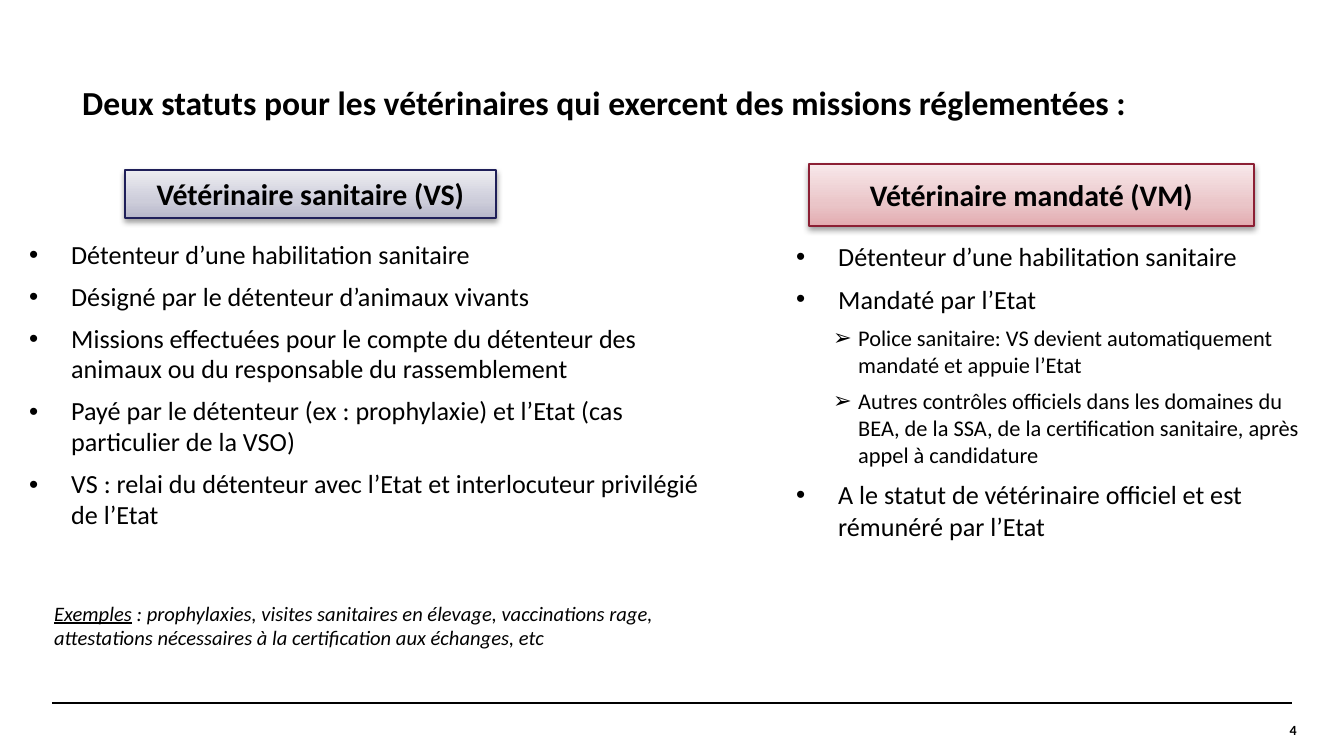
from lxml.etree import SubElement
from pptx import Presentation
from pptx.dml.color import RGBColor
from pptx.enum.shapes import MSO_CONNECTOR, MSO_SHAPE
from pptx.enum.text import MSO_ANCHOR, PP_ALIGN
from pptx.oxml import parse_xml
from pptx.oxml.ns import nsdecls, qn
from pptx.util import Emu, Pt

SCALE = 914400 / 134.4
FONT = "Calibri"
BLACK = "000000"

TITLE = "Deux statuts pour les vétérinaires qui exercent des missions réglementées :"
EXAMPLES = [
    "Exemples",
    " : prophylaxies, visites sanitaires en élevage, vaccinations rage, "
    "attestations nécessaires à la certification aux échanges, etc",
]
PAGE_NUMBER = "4"
RULE = (52, 703, 1292, 703)

# (bullet, left margin px, hanging px, size pt) per level
LEVELS = [("•", 42, 42, 14), ("➢", 62, 25, 12)]

STATUSES = [
    {
        "heading": "Vétérinaire sanitaire (VS)",
        "heading_box": (125, 170, 371, 48),
        "outline": "1F1F59",
        "gradient": [(0, "B7B7CA"), (35, "CDCDDA"), (100, "ECECF1")],
        "points_box": (16, 233, 719, 362),
        "line_spacing": 0.98,
        "points": [
            (0, "Détenteur d’une habilitation sanitaire", 3),
            (0, "Désigné par le détenteur d’animaux vivants", 3),
            (0, "Missions effectuées pour le compte du détenteur des animaux "
                "ou du responsable du rassemblement", 3),
            (0, "Payé par le détenteur (ex : prophylaxie) et l’Etat "
                "(cas particulier de la VSO)", 3),
            (0, "VS : relai du détenteur avec l’Etat et interlocuteur "
                "privilégié de l’Etat", 3),
        ],
    },
    {
        "heading": "Vétérinaire mandaté (VM)",
        "heading_box": (809, 164, 445, 62),
        "outline": "8C1F34",
        "gradient": [(0, "E3ABB0"), (35, "EAC5C8"), (100, "F8E8EA")],
        "points_box": (783, 234, 530, 465),
        "line_spacing": 1.0,
        "points": [
            (0, "Détenteur d’une habilitation sanitaire", 3),
            (0, "Mandaté par l’Etat", 2),
            (1, "Police sanitaire: VS devient automatiquement mandaté "
                "et appuie l’Etat", 2),
            (1, "Autres contrôles officiels dans les domaines du BEA, de la SSA, "
                "de la certification sanitaire, après appel à candidature", 3),
            (0, "A le statut de vétérinaire officiel et est rémunéré par l’Etat", 5),
        ],
    },
]


def px(*lengths):
    """Turn px lengths into EMU."""
    return [Emu(round(length * SCALE)) for length in lengths]


def color(code):
    """Turn a hex string into a colour."""
    return RGBColor.from_string(code)


def style(font, size, bold=False, italic=False):
    """Apply the shared typeface and the given size and weight."""
    font.name, font.size, font.bold, font.italic = FONT, Pt(size), bold, italic
    font.color.rgb = color(BLACK)


def add_text(slide, box, text=""):
    """Add a wrapping text box and return its frame."""
    frame = slide.shapes.add_textbox(*px(*box)).text_frame
    frame.word_wrap = True
    frame.text = text
    return frame


def add_heading(slide, status):
    """Add a gradient heading with a soft shadow."""
    heading = slide.shapes.add_shape(MSO_SHAPE.RECTANGLE, *px(*status["heading_box"]))
    heading.line.color.rgb = color(status["outline"])
    heading.line.width = Pt(0.75)
    stops = "".join(
        f'<a:gs pos="{position * 1000}"><a:srgbClr val="{code}"/></a:gs>'
        for position, code in status["gradient"]
    )
    properties = heading.element.spPr
    properties.find(qn("a:ln")).addprevious(parse_xml(
        f'<a:gradFill {nsdecls("a")} rotWithShape="1"><a:gsLst>{stops}</a:gsLst>'
        '<a:lin ang="16200000" scaled="0"/></a:gradFill>'))
    properties.append(parse_xml(
        f'<a:effectLst {nsdecls("a")}><a:outerShdw blurRad="40000" dist="20000" '
        f'dir="5400000" rotWithShape="0"><a:srgbClr val="{BLACK}">'
        '<a:alpha val="38000"/></a:srgbClr></a:outerShdw></a:effectLst>'))
    frame = heading.text_frame
    frame.margin_left = frame.margin_right = frame.margin_top = frame.margin_bottom = 0
    frame.vertical_anchor = MSO_ANCHOR.MIDDLE
    frame.text = status["heading"]
    paragraph = frame.paragraphs[0]
    paragraph.alignment = PP_ALIGN.CENTER
    paragraph.space_after = Pt(5)
    style(paragraph.runs[0].font, 16, bold=True)


def add_points(slide, status):
    """Add the bulleted points of one status."""
    frame = add_text(slide, status["points_box"])
    for index, (level, point, after) in enumerate(status["points"]):
        paragraph = frame.add_paragraph() if index else frame.paragraphs[0]
        bullet, margin, hanging, size = LEVELS[level]
        paragraph.text = point
        paragraph.level = level
        paragraph.line_spacing = status["line_spacing"]
        paragraph.space_before = Pt(3 if index else 0)
        paragraph.space_after = Pt(after)
        layout = paragraph._p.get_or_add_pPr()
        left, indent = px(margin, -hanging)
        layout.set("marL", str(left))
        layout.set("indent", str(indent))
        SubElement(layout, qn("a:buFont"), typeface="Arial")
        SubElement(layout, qn("a:buChar"), char=bullet)
        style(paragraph.runs[0].font, size)


def main():
    """Build the slide on the two veterinary statuses."""
    deck = Presentation()
    deck.slide_width, deck.slide_height = px(1344, 756)
    slide = deck.slides.add_slide(deck.slide_layouts[6])

    rule = slide.shapes.add_connector(MSO_CONNECTOR.STRAIGHT, *px(*RULE))
    rule.line.color.rgb = color(BLACK)
    rule.line.width = Pt(0.8)
    SubElement(rule._element.spPr, qn("a:effectLst"))

    number = add_text(slide, (1111, 715, 199, 52), PAGE_NUMBER).paragraphs[0]
    number.alignment = PP_ALIGN.RIGHT
    style(number.runs[0].font, 7.5, bold=True)

    for status in STATUSES:
        add_points(slide, status)
        add_heading(slide, status)

    examples = add_text(slide, (16, 594, 672, 89)).paragraphs[0]
    examples._p.get_or_add_pPr().set("marL", str(px(25)[0]))
    for index, part in enumerate(EXAMPLES):
        run = examples.add_run()
        run.text = part
        style(run.font, 11, italic=True)
        run.font.underline = index == 0

    title = add_text(slide, (69, 75, 1265, 95), TITLE).paragraphs[0]
    style(title.runs[0].font, 18, bold=True)

    deck.save("out.pptx")


if __name__ == "__main__":
    main()
